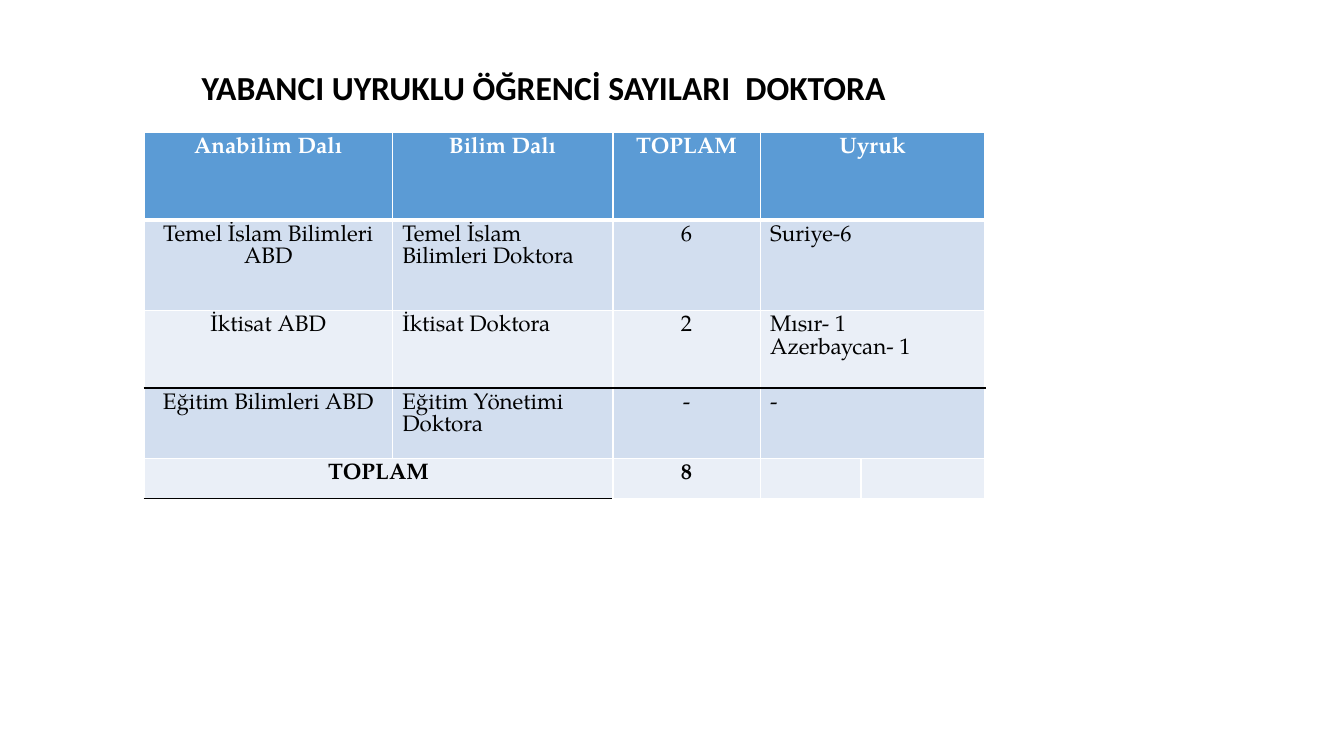
from lxml import etree
from pptx import Presentation
from pptx.dml.color import RGBColor
from pptx.enum.text import MSO_ANCHOR, MSO_AUTO_SIZE, PP_ALIGN
from pptx.oxml.ns import qn
from pptx.util import Inches, Pt

LEFT, CENTER = PP_ALIGN.LEFT, PP_ALIGN.CENTER
MIDDLE = MSO_ANCHOR.MIDDLE
NO_AUTOFIT = MSO_AUTO_SIZE.NONE
WHITE = RGBColor(0xFF, 0xFF, 0xFF)
BLACK = RGBColor(0x00, 0x00, 0x00)
BLUE = RGBColor(0x5B, 0x9B, 0xD5)
BAND_DARK = RGBColor(0xD2, 0xDE, 0xEF)
BAND_LIGHT = RGBColor(0xEA, 0xEF, 0xF7)

COL_WIDTHS = [2.46, 2.19, 1.46, 1, 1.23]
ROW_HEIGHTS = [0.87, 0.9, 0.77, 0.7, 0.4]
ROWS = [
    ["Anabilim Dalı", "Bilim Dalı", "TOPLAM", "Uyruk", ""],
    ["Temel İslam Bilimleri ABD", "Temel İslam Bilimleri Doktora", "6", "Suriye-6", ""],
    ["İktisat ABD", "İktisat Doktora", "2", "Mısır- 1\nAzerbaycan- 1", ""],
    ["Eğitim Bilimleri ABD", "Eğitim Yönetimi Doktora", "-", "-", ""],
    ["TOPLAM", "", "8", "", ""],
]
LAST = len(ROWS) - 1


def set_font(p, **values):
    color = values.pop("color")
    for name, value in values.items():
        setattr(p.font, name, value)
    p.font.color.rgb = color


def set_border(cell, side, color, width):
    ln = etree.SubElement(cell._tc.get_or_add_tcPr(), qn(f"a:ln{side}"), w=str(Pt(width)))
    fill = etree.SubElement(ln, qn("a:solidFill"))
    etree.SubElement(fill, qn("a:srgbClr"), val=str(color))


prs = Presentation()
prs.slide_width, prs.slide_height = Inches(13.33), Inches(7.5)
s = prs.slides.add_slide(prs.slide_layouts[5])

title = s.shapes.title
title.left, title.top = Inches(1.9), Inches(0.4)
title.width, title.height = Inches(10.52), Inches(0.98)
tf = title.text_frame
tf.text = "YABANCI UYRUKLU ÖĞRENCİ SAYILARI  DOKTORA"
tf.vertical_anchor = MIDDLE
tf.auto_size = NO_AUTOFIT
p = tf.paragraphs[0]
p.alignment = LEFT
p.line_spacing = 0.9
set_font(p, name="Calibri", size=Pt(24), bold=True, color=BLACK)

table = s.shapes.add_table(
    len(ROWS), len(COL_WIDTHS), Inches(1.43), Inches(1.31),
    Inches(sum(COL_WIDTHS)), Inches(sum(ROW_HEIGHTS)),
).table
for col, width in zip(table.columns, COL_WIDTHS):
    col.width = Inches(width)
for row, height in zip(table.rows, ROW_HEIGHTS):
    row.height = Inches(height)

for r, texts in enumerate(ROWS):
    header = r == 0
    for c, text in enumerate(texts):
        cell = table.cell(r, c)
        cell.text = text
        for p in cell.text_frame.paragraphs:
            p.alignment = CENTER if header or c in (0, 2) else LEFT
            set_font(p, name="TeX Gyre Pagella", size=Pt(16),
                     bold=header or r == LAST, color=WHITE if header else BLACK)
        black_below = r == 2 or (r == LAST and c < 2)
        set_border(cell, "L", WHITE, 1)
        set_border(cell, "R", WHITE, 1)
        set_border(cell, "T", BLACK if r == 3 else WHITE, 3 if r == 1 else 1)
        set_border(cell, "B", BLACK if black_below else WHITE, 3 if header else 1)
        cell.fill.solid()
        cell.fill.fore_color.rgb = BLUE if header else BAND_DARK if r % 2 else BAND_LIGHT

for r in range(LAST):
    table.cell(r, 3).merge(table.cell(r, 4))
table.cell(LAST, 0).merge(table.cell(LAST, 1))

prs.save("out.pptx")
